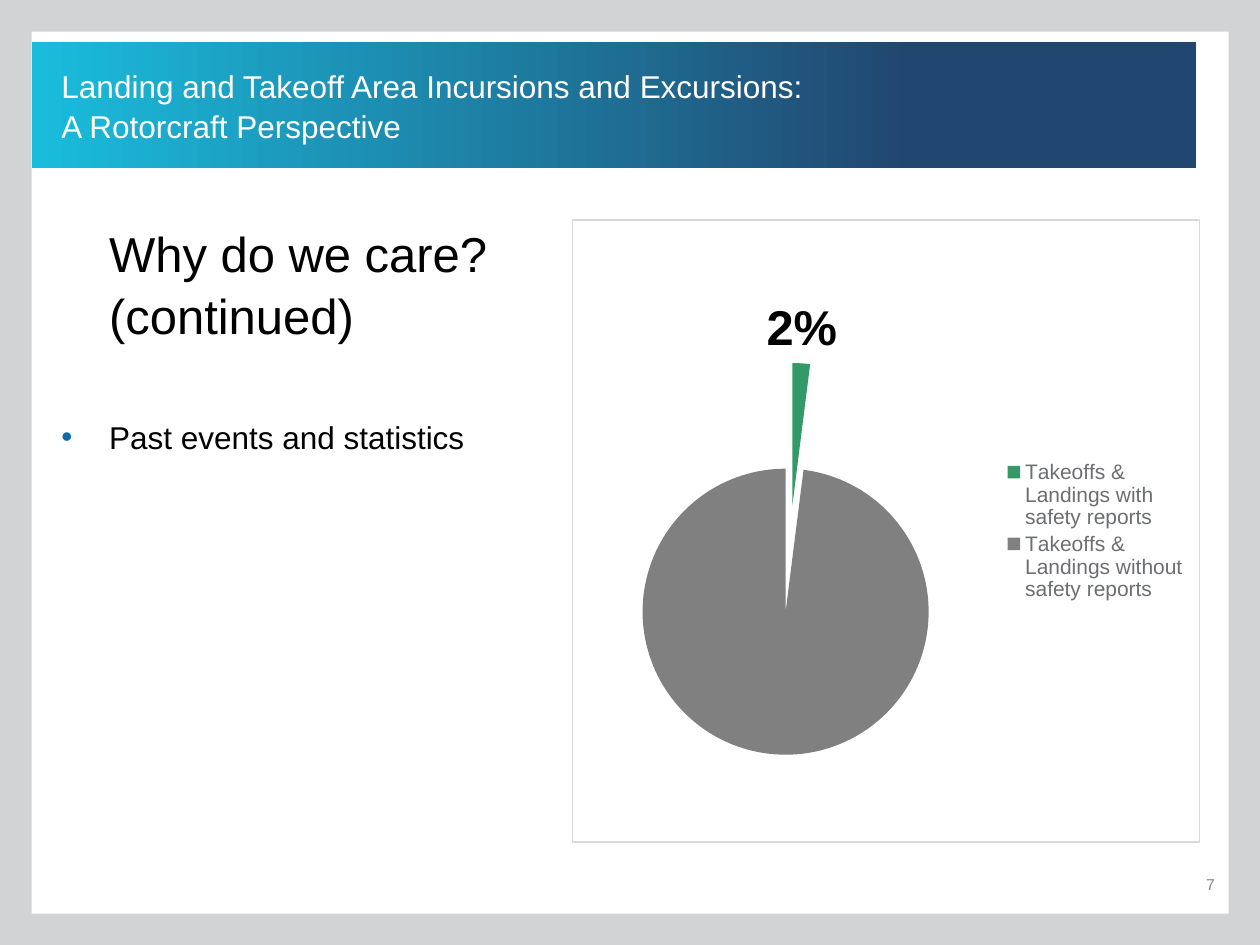
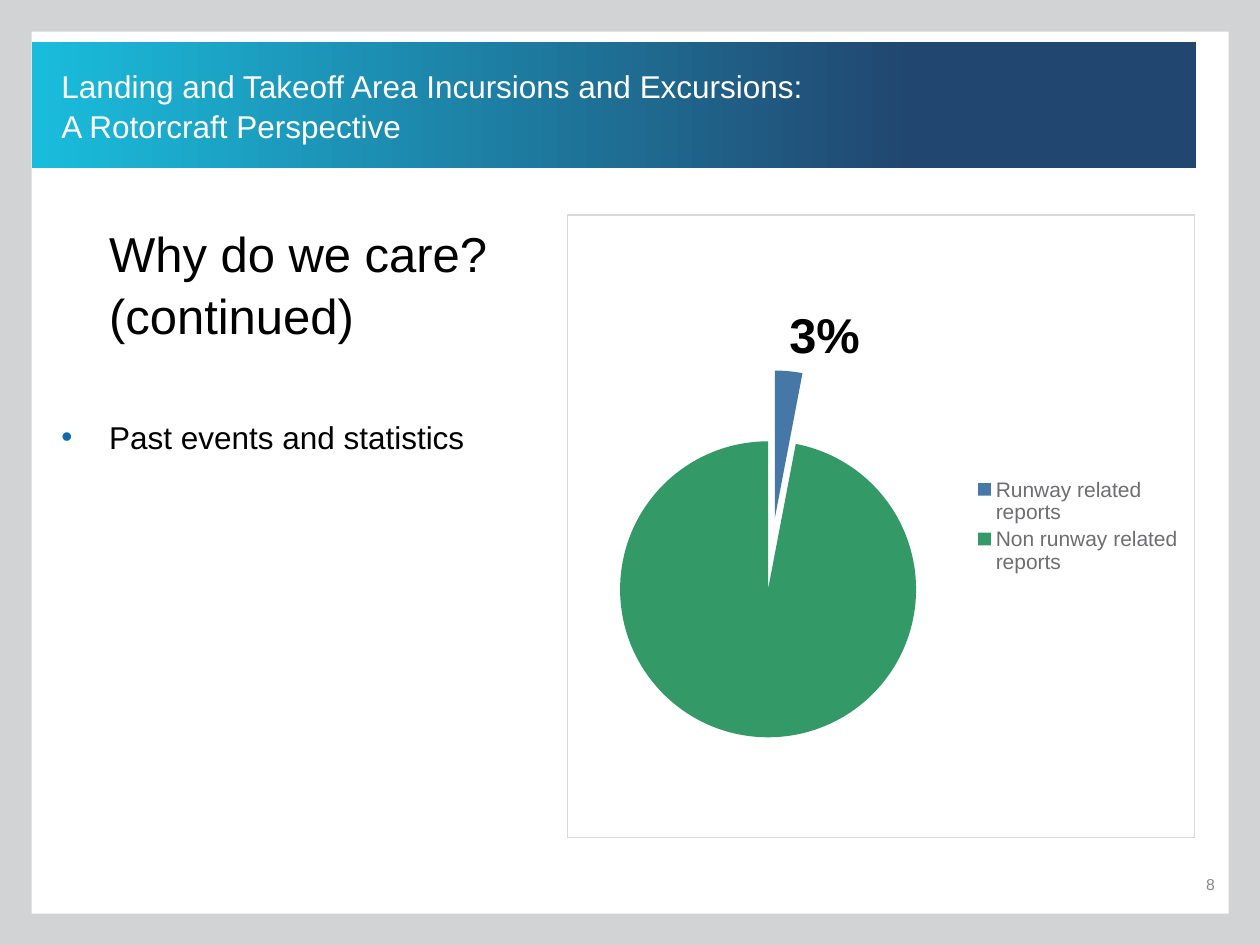
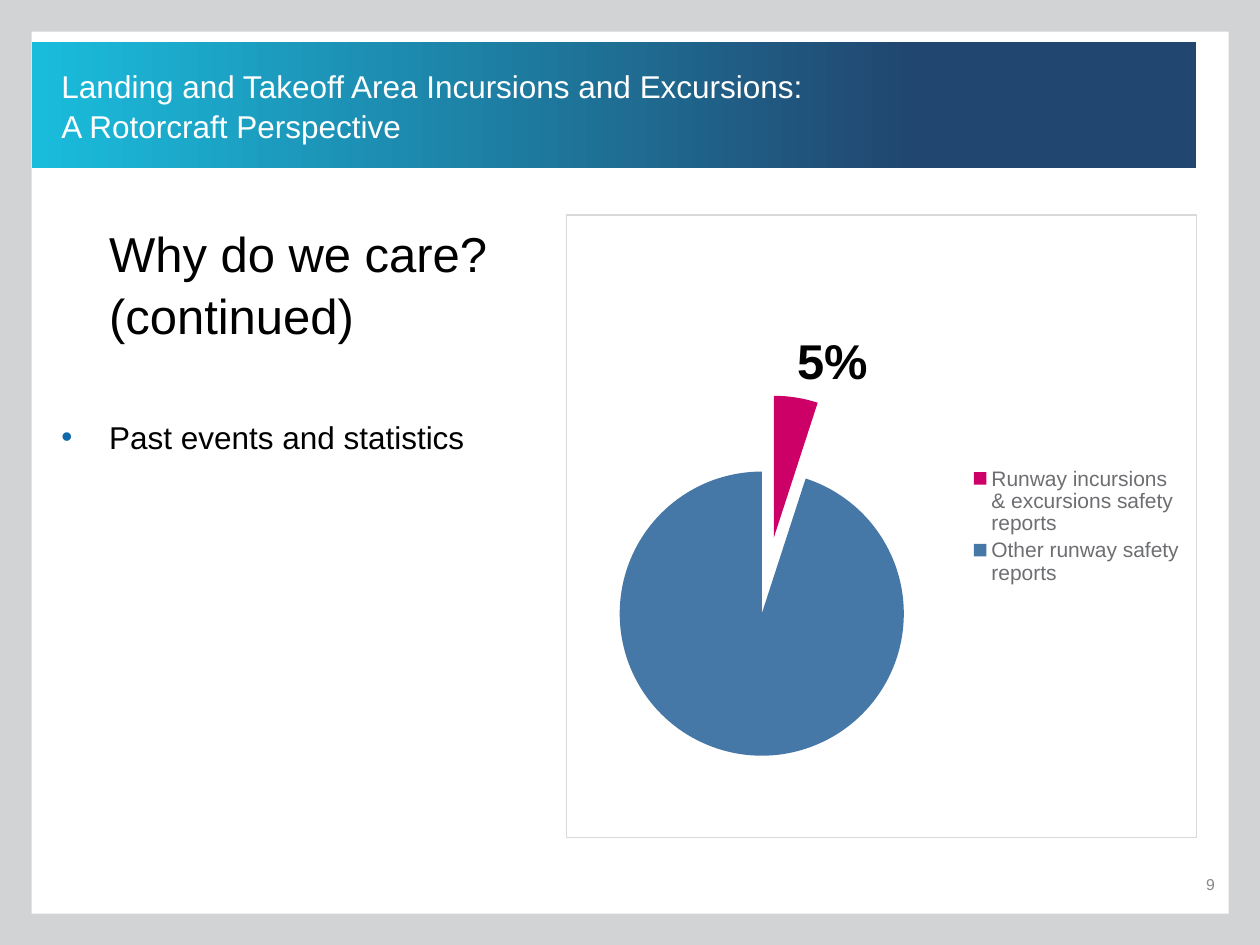
import pptx
import pptx.util
import pptx.oxml
import pptx.oxml.ns
import pptx.chart.data
import pptx.dml.color
import pptx.enum.chart
import pptx.enum.shapes
import pptx.enum.text

Cm = pptx.util.Cm
Pt = pptx.util.Pt
Align = pptx.enum.text.PP_ALIGN
Anchor = pptx.enum.text.MSO_ANCHOR

FONT = "Arial"
TITLE = "Landing and Takeoff Area Incursions and Excursions:\vA Rotorcraft Perspective"
HEAD = "Why do we care? (continued)"
POINT = "Past events and statistics"
COLORS = {
    "edge": "D1D3D4", "white": "FFFFFF", "black": "000000",
    "navy": "21466F", "cyan": "1ABCDC", "bullet": "106AA9",
    "page": "898989", "legend": "6D6E71", "frame": "D9D9D9",
    "green": "339966", "gray": "808080", "blue": "4678A7", "pink": "CC0066",
}
SLIDES = [
    {"page": 7, "width": 10.01, "box": (11.53, 4.42, 12.67, 12.57),
     "parts": [("Takeoffs & Landings with safety reports", 2, "green"),
               ("Takeoffs & Landings without safety reports", 98, "gray")],
     "burst": 37, "pie": (0.03, 0.23, 0.63, 0.63)},
    {"page": 8, "width": 9.78, "box": (11.43, 4.32, 12.67, 12.57),
     "parts": [("Runway related reports", 3, "blue"),
               ("Non runway related reports", 97, "green")],
     "burst": 24, "pie": (0.03, 0.25, 0.59, 0.59)},
    {"page": 9, "width": 9.55, "box": (11.4, 4.32, 12.73, 12.57),
     "parts": [("Runway incursions & excursions safety reports", 5, "pink"),
               ("Other runway safety reports", 95, "blue")],
     "burst": 27, "pie": (0.03, 0.29, 0.58, 0.58)},
]


def rgb(name):
    return pptx.dml.color.RGBColor.from_string(COLORS[name])


def node(tag, inner="", attrs=""):
    names = pptx.oxml.ns.nsdecls("a", "c")
    return pptx.oxml.parse_xml(f"<{tag} {names} {attrs}>{inner}</{tag}>")


def style(font, size, color, bold=False):
    font.name, font.size, font.bold = FONT, Pt(size), bold
    font.color.rgb = rgb(color)


def write(frame, text, size=18, color="black", align=Align.LEFT, before=0,
          lines=1.05, indent=0, bullet=False, first=True):
    para = frame.paragraphs[0] if first else frame.add_paragraph()
    para.text = text
    para.alignment, para.line_spacing = align, lines
    para.space_before = Pt(before)
    props = para._p.get_or_add_pPr()
    props.set("marL", str(Cm(indent)))
    props.set("indent", str(Cm(-indent if bullet else 0)))
    if bullet:
        props.append(node("a:buClr", f'<a:srgbClr val="{COLORS["bullet"]}"/>'))
        props.append(node("a:buFont", attrs=f'typeface="{FONT}"'))
        props.append(node("a:buChar", attrs='char="•"'))
    for run in para.runs:
        style(run.font, size, color)


def text_box(slide, box, inset=(0, 0, 0, 0), anchor=Anchor.TOP):
    frame = slide.shapes.add_textbox(*map(Cm, box)).text_frame
    frame.word_wrap, frame.vertical_anchor = True, anchor
    (frame.margin_left, frame.margin_top,
     frame.margin_right, frame.margin_bottom) = map(Cm, inset)
    return frame


def panel(slide, box, color):
    shape = slide.shapes.add_shape(
        pptx.enum.shapes.MSO_SHAPE.RECTANGLE, *map(Cm, box))
    shape.shadow.inherit = False
    shape.line.fill.background()
    shape.fill.solid()
    shape.fill.fore_color.rgb = rgb(color)
    return shape


def base(slide, page):
    panel(slide, (0, 0, 25.4, 19.05), "edge")
    panel(slide, (0.64, 0.64, 24.13, 17.78), "white")
    fill = panel(slide, (0.64, 0.84, 23.47, 2.54), "navy").fill
    fill.gradient()
    fill.gradient_angle = 180
    for stop, (place, color) in zip(fill.gradient_stops, [(0.24, "navy"), (1, "cyan")]):
        stop.position, stop.color.rgb = place, rgb(color)
    write(text_box(slide, (21.67, 17.63, 2.82, 0.64)), str(page), size=9,
          color="page", align=Align.RIGHT, lines=1)
    write(text_box(slide, (1.24, 0.84, 22.86, 2.54), anchor=Anchor.MIDDLE),
          TITLE, color="white")


def body(slide, width):
    frame = text_box(slide, (1.24, 4.32, width, 12.57), (0, 0.13, 0.25, 0.13))
    write(frame, HEAD, size=28, indent=0.96)
    write(frame, POINT, before=41, indent=0.96, bullet=True, first=False)


def pie(slide, item):
    names, values, colors = zip(*item["parts"])
    data = pptx.chart.data.CategoryChartData(number_format="0")
    data.categories = names
    data.add_series("Series 1", values)
    chart = slide.shapes.add_chart(
        pptx.enum.chart.XL_CHART_TYPE.PIE, *map(Cm, item["box"]), data).chart
    style(chart.font, 10, "black")
    chart.has_title, chart.has_legend = False, True
    chart.legend.position = pptx.enum.chart.XL_LEGEND_POSITION.RIGHT
    chart.legend.include_in_layout = False
    style(chart.legend.font, 12, "legend")
    plot = chart.plots[0]
    plot.vary_by_categories = True
    series = plot.series[0]
    root = series._element
    root.find(pptx.oxml.ns.qn("c:tx")).addnext(
        node("c:explosion", attrs=f'val="{item["burst"]}"'))
    for spot, color in enumerate(colors):
        fill = series.points[spot].format.fill
        fill.solid()
        fill.fore_color.rgb = rgb(color)
    series.data_labels.show_value = False
    label = series.points[0].data_label
    style(label.font, 28, "black", bold=True)
    label.position = pptx.enum.chart.XL_LABEL_POSITION.OUTSIDE_END
    mark = root.find(".//" + pptx.oxml.ns.qn("c:dLbl"))
    for tag, value in [("c:showVal", "0"), ("c:showPercent", "1")]:
        mark.find(pptx.oxml.ns.qn(tag)).set("val", value)
    place(chart, item["pie"])


def place(chart, area):
    space = chart._chartSpace
    rules = '<c:layoutTarget val="inner"/><c:xMode val="edge"/><c:yMode val="edge"/>'
    rules += "".join(f'<c:{key} val="{value}"/>' for key, value in zip("xywh", area))
    zone = space.find(".//" + pptx.oxml.ns.qn("c:plotArea"))
    for old in zone.findall(pptx.oxml.ns.qn("c:layout")):
        zone.remove(old)
    zone.insert(0, node("c:layout", f"<c:manualLayout>{rules}</c:manualLayout>"))
    line = f'<a:solidFill><a:srgbClr val="{COLORS["frame"]}"/></a:solidFill>'
    space.find(pptx.oxml.ns.qn("c:chart")).addnext(
        node("c:spPr", f'<a:noFill/><a:ln w="{Pt(0.75)}">{line}</a:ln>'))


def main():
    deck = pptx.Presentation()
    deck.slide_width, deck.slide_height = Cm(25.4), Cm(19.05)
    for item in SLIDES:
        slide = deck.slides.add_slide(deck.slide_layouts[6])
        base(slide, item["page"])
        body(slide, item["width"])
        pie(slide, item)
    deck.save("out.pptx")


if __name__ == "__main__":
    main()
